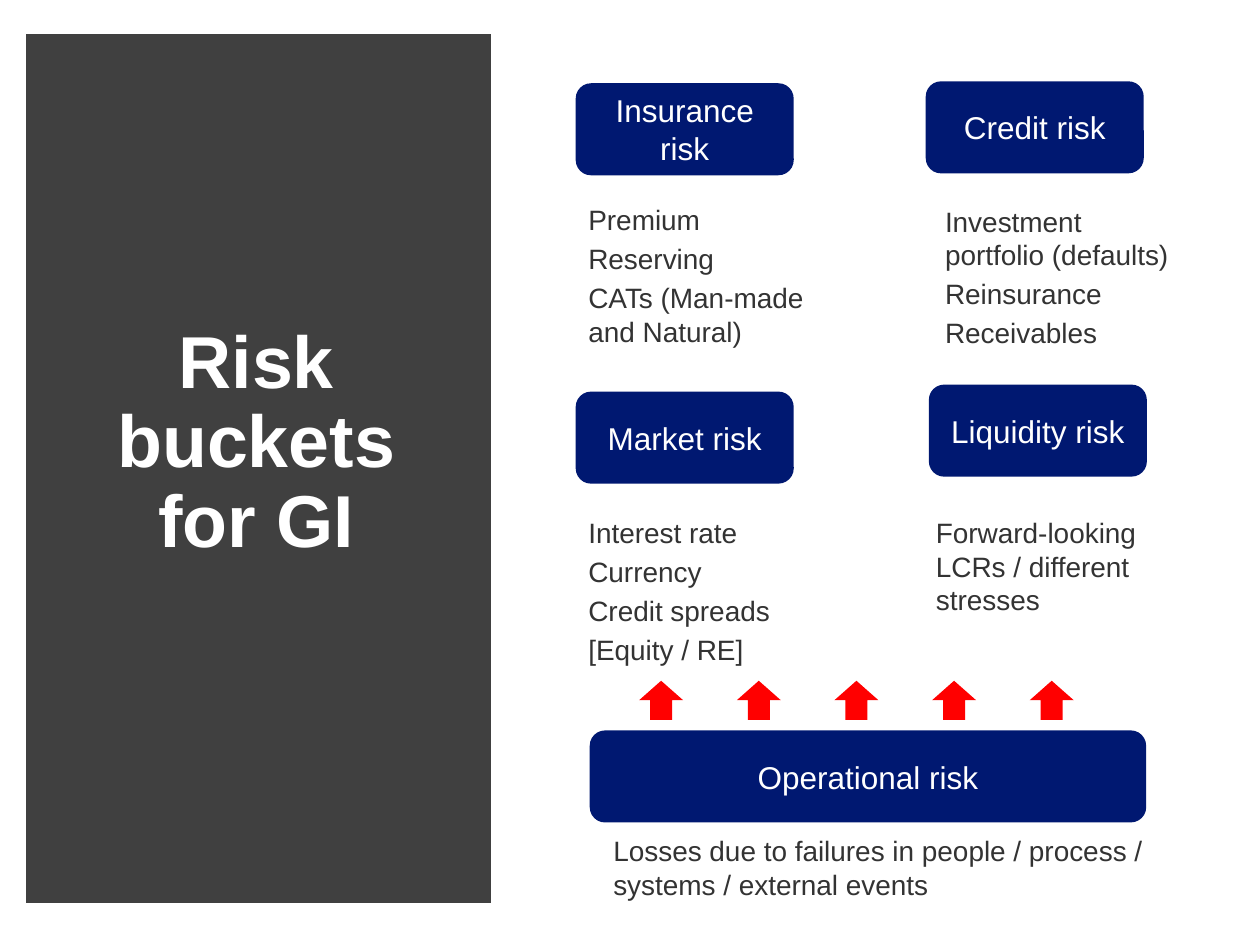
import pptx
import pptx.dml.color
import pptx.enum.shapes
import pptx.enum.text
import pptx.oxml.ns
import pptx.util
from lxml import etree

Pt = pptx.util.Pt
RGBColor = pptx.dml.color.RGBColor
SHAPE = pptx.enum.shapes.MSO_SHAPE
ALIGN = pptx.enum.text.PP_ALIGN
ANCHOR = pptx.enum.text.MSO_ANCHOR
AUTO_SIZE = pptx.enum.text.MSO_AUTO_SIZE
qn = pptx.oxml.ns.qn

CHARCOAL = RGBColor(0x40, 0x40, 0x40)
NAVY = RGBColor(0x00, 0x18, 0x71)
RED = RGBColor(0xFF, 0x00, 0x00)
WHITE = RGBColor(0xFF, 0xFF, 0xFF)
INK = RGBColor(0x33, 0x33, 0x33)

BUCKET_W, BUCKET_H = 124.6, 52.6
ARROW_COUNT, ARROW_W, ARROW_H = 5, 25.2, 22.3

BUCKETS = [
    ("Insurance risk", (329, 47.6), (329, 112.4, 141, 91),
     ["Premium", "Reserving", "CATs (Man-made and Natural)"]),
    ("Credit risk", (529, 46.5), (532.8, 113, 152, 91),
     ["Investment portfolio (defaults)", "Reinsurance", "Receivables"]),
    ("Market risk", (329, 223.8), (329, 291, 141, 94),
     ["Interest rate", "Currency", "Credit spreads", "[Equity / RE]"]),
    ("Liquidity risk", (530.8, 219.8), (527.6, 291, 141, 65.5),
     ["Forward-looking LCRs / different stresses"]),
]


def place(shape, box):
    shape.left, shape.top, shape.width, shape.height = map(Pt, box)


def style_paragraph(paragraph, size, color, bold=False, align=ALIGN.LEFT, after=0):
    paragraph.alignment = align
    paragraph.space_before = Pt(0)
    paragraph.space_after = Pt(after)
    paragraph.font.name = "Arial"
    paragraph.font.size = Pt(size)
    paragraph.font.bold = bold
    paragraph.font.color.rgb = color


def add_block(slide, preset, box, color):
    block = slide.shapes.add_shape(preset, *map(Pt, box))
    block.shadow.inherit = False
    block.fill.solid()
    block.fill.fore_color.rgb = color
    block.line.fill.background()
    return block


def add_title_panel(slide, box):
    left, top, width, height = box
    panel = add_block(slide, SHAPE.RECTANGLE, box, CHARCOAL)
    panel.line.color.rgb = CHARCOAL
    panel.line.width = Pt(10)
    outline = panel.element.spPr.find(qn("a:ln"))
    etree.SubElement(outline, qn("a:miter")).set("lim", "800000")

    title = slide.shapes.title
    title.element.addprevious(panel.element)
    place(title, (left + 23.8, top + 33.8, width - 50.4, height - 95.8))
    title.text_frame.text = "Risk buckets for GI"
    title.text_frame.word_wrap = True
    title.text_frame.auto_size = AUTO_SIZE.NONE
    title.text_frame.vertical_anchor = ANCHOR.MIDDLE
    heading = title.text_frame.paragraphs[0]
    style_paragraph(heading, 42, WHITE, True, ALIGN.CENTER, 6)
    heading.line_spacing = 0.9


def add_risk_label(slide, box, name):
    label = add_block(slide, SHAPE.ROUNDED_RECTANGLE, box, NAVY)
    label.text_frame.text = name
    label.text_frame.word_wrap = True
    label.text_frame.vertical_anchor = ANCHOR.MIDDLE
    style_paragraph(label.text_frame.paragraphs[0], 18, WHITE, align=ALIGN.CENTER)


def fill_details(holder, box, details):
    place(holder, box)
    frame = holder.text_frame
    frame.text = "\n".join(details)
    frame.word_wrap = True
    frame.auto_size = AUTO_SIZE.NONE
    frame.vertical_anchor = ANCHOR.TOP
    for paragraph in frame.paragraphs:
        style_paragraph(paragraph, 16, INK, after=3)
        properties = paragraph._p.get_or_add_pPr()
        properties.set("marL", "0")
        properties.set("indent", "0")
        bullet = etree.Element(qn("a:buNone"))
        properties.find(qn("a:spcAft")).addnext(bullet)


def add_operational_risk(slide, box):
    left, top, width, height = box
    for index in range(ARROW_COUNT):
        arrow_box = (left + 28.2 + index * 55.8, top - 28.4, ARROW_W, ARROW_H)
        add_block(slide, SHAPE.UP_ARROW, arrow_box, RED)
    add_risk_label(slide, box, "Operational risk")
    losses_box = (left + 6.4, top + height + 3, width, 46)
    losses = slide.shapes.add_textbox(*map(Pt, losses_box))
    fill_details(losses, losses_box, [
        "Losses due to failures in people / process / systems / external events"])


def main():
    deck = pptx.Presentation()
    deck.slide_width, deck.slide_height = Pt(720), Pt(540)
    slide = deck.slides.add_slide(deck.slide_layouts.get_by_name("Comparison"))

    add_title_panel(slide, (20, 24.6, 255.6, 486.6))
    for index, (name, corner, details_box, details) in enumerate(BUCKETS, 1):
        add_risk_label(slide, (*corner, BUCKET_W, BUCKET_H), name)
        fill_details(slide.placeholders[index], details_box, details)
    add_operational_risk(slide, (337, 417.4, 318, BUCKET_H))

    deck.save("out.pptx")


if __name__ == "__main__":
    main()
